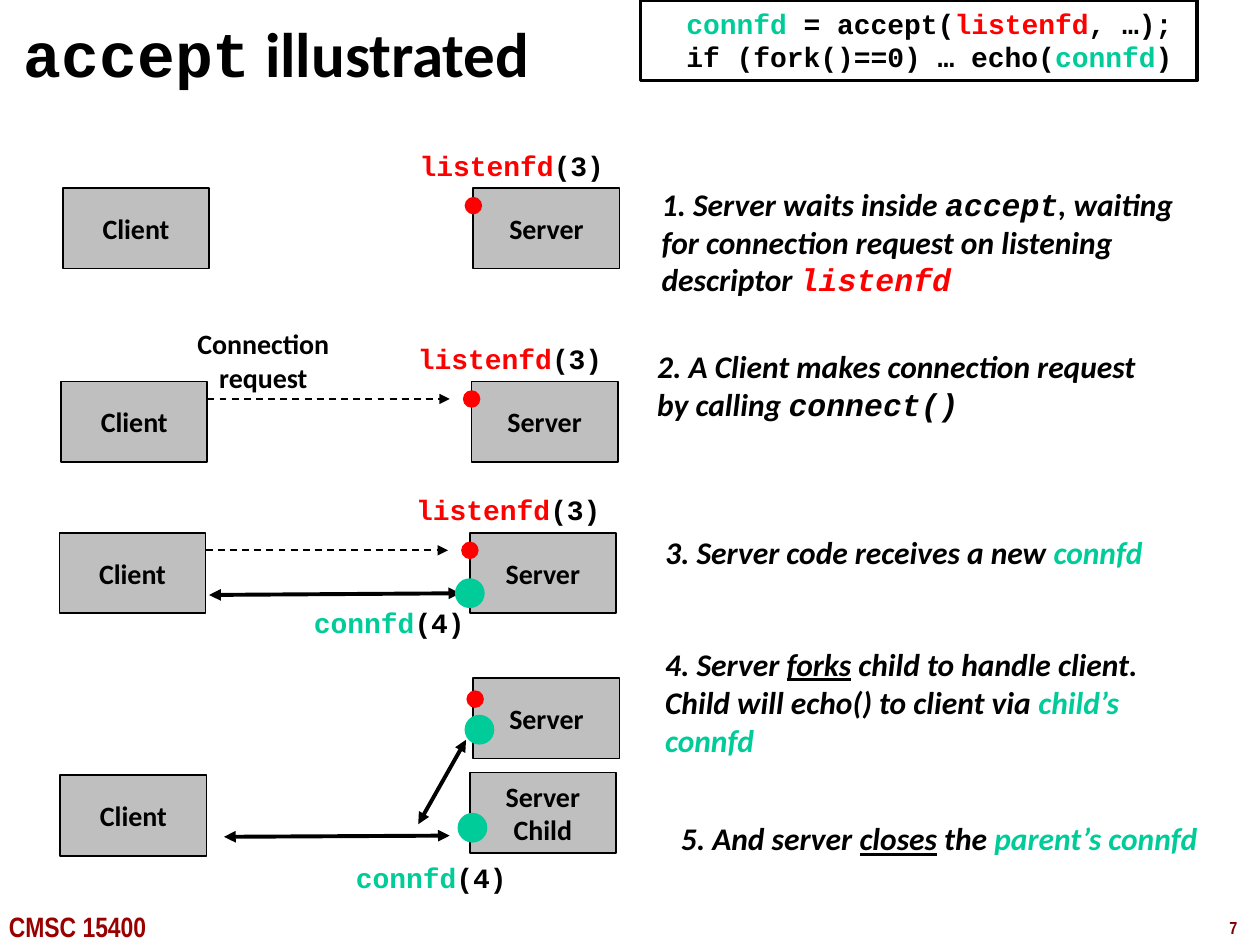
from lxml import etree
from pptx import Presentation
from pptx.dml.color import RGBColor
from pptx.enum.dml import MSO_LINE
from pptx.enum.shapes import MSO_CONNECTOR, MSO_SHAPE
from pptx.enum.text import MSO_ANCHOR, MSO_AUTO_SIZE, PP_ALIGN
from pptx.oxml.ns import qn
from pptx.util import Pt

BLACK, WHITE, GREY = "000000", "FFFFFF", "BFBFBF"
RED, GREEN, MAROON, DARK_RED = "FF0000", "00CC99", "800000", "990000"
SANS, MONO, NARROW = "Calibri", "Courier New", "Arial Narrow"
BOX_WIDTH, BOX_HEIGHT, SERVER_GAP = 83.5, 46, 234.5


def color(hex_code):
    """Turn a hex string into a colour."""
    return RGBColor.from_string(hex_code)


def write(frame, paragraphs, size, font=SANS, ink=BLACK, italic=False,
          align=PP_ALIGN.LEFT, anchor=MSO_ANCHOR.MIDDLE, wrap=False):
    """Fill a frame with paragraphs of runs, each a text and its own overrides."""
    frame.word_wrap = wrap
    frame.vertical_anchor = anchor
    for index, runs in enumerate(paragraphs):
        paragraph = frame.add_paragraph() if index else frame.paragraphs[0]
        paragraph.alignment = align
        paragraph.font.size = Pt(size)
        paragraph.font.bold = True
        paragraph.font.italic = italic
        paragraph.font.name = font
        paragraph.font.color.rgb = color(ink)
        for text, style in runs:
            run = paragraph.add_run()
            run.text = text
            if "font" in style:
                run.font.name = style["font"]
            if "ink" in style:
                run.font.color.rgb = color(style["ink"])
            if "underline" in style:
                run.font.underline = style["underline"]


def add_text(slide, left, top, width, height, paragraphs, size, **options):
    """Place a text box that grows with its text."""
    box = slide.shapes.add_textbox(Pt(left), Pt(top), Pt(width), Pt(height))
    write(box.text_frame, paragraphs, size, **options)
    box.text_frame.auto_size = MSO_AUTO_SIZE.SHAPE_TO_FIT_TEXT


def add_box(slide, left, top, width, height, fill, weight):
    """Draw a filled rectangle with a black outline."""
    box = slide.shapes.add_shape(MSO_SHAPE.RECTANGLE, Pt(left), Pt(top), Pt(width), Pt(height))
    box.shadow.inherit = False
    box.fill.solid()
    box.fill.fore_color.rgb = color(fill)
    box.line.color.rgb = color(BLACK)
    box.line.width = Pt(weight)
    return box


def add_process(slide, left, top, *names):
    """Draw a process box with one centred line for each name."""
    box = add_box(slide, left, top, BOX_WIDTH, BOX_HEIGHT, GREY, 1)
    write(box.text_frame, [[(name, {})] for name in names], 16, align=PP_ALIGN.CENTER)


def add_descriptor(slide, center_x, center_y, diameter, fill):
    """Draw a descriptor dot around its centre."""
    dot = slide.shapes.add_shape(MSO_SHAPE.OVAL, Pt(center_x - diameter / 2),
                                 Pt(center_y - diameter / 2), Pt(diameter), Pt(diameter))
    dot.shadow.inherit = False
    dot.fill.solid()
    dot.fill.fore_color.rgb = color(fill)
    dot.line.fill.background()


def add_arrow(slide, start, end, both_ways=True):
    """Draw a thick two-way arrow or a thin dashed one-way arrow."""
    arrow = slide.shapes.add_connector(MSO_CONNECTOR.STRAIGHT, *map(Pt, start + end))
    arrow.line.color.rgb = color(BLACK)
    arrow.line.width = Pt(2.25 if both_ways else 1)
    if not both_ways:
        arrow.line.dash_style = MSO_LINE.DASH
    outline = arrow.line._get_or_add_ln()
    for end_tag in ("a:headEnd", "a:tailEnd") if both_ways else ("a:tailEnd",):
        etree.SubElement(outline, qn(end_tag)).set("type", "triangle")
    etree.SubElement(arrow._element.spPr, qn("a:effectLst"))


def add_descriptor_label(slide, left, top, width, name, number, ink):
    """Label a descriptor with its name and number."""
    add_text(slide, left, top, width, 26.5, [[(name, {"ink": ink}), (f"({number})", {})]],
             16, font=MONO, align=PP_ALIGN.CENTER)


def add_stage(slide, left, top, requested):
    """Draw a client and a listening server, with the request if there is one."""
    server_left = left + SERVER_GAP
    add_process(slide, left, top, "Client")
    add_process(slide, server_left, top, "Server")
    if requested:
        add_arrow(slide, (left + BOX_WIDTH, top + 10), (left + 222, top + 10), both_ways=False)
    add_descriptor(slide, server_left, top + 10, 10, RED)
    add_descriptor_label(slide, server_left - 38, top - 26.5, 120, "listenfd", 3, RED)


def add_connection(slide, left, top):
    """Add the open connection to a stage."""
    server_left = left + SERVER_GAP
    add_arrow(slide, (left + 85.5, top + 35.5), (left + 229, top + 34.5))
    add_descriptor(slide, server_left, top + 34.5, 17, GREEN)
    add_descriptor_label(slide, left + 138, top + 38, 101, "connfd", 4, GREEN)


def add_forked_stage(slide, left, top):
    """Draw the client with the parent server and its child."""
    child_left, child_top = left + 234, top + 54
    add_process(slide, left, top + 55.5, "Client")
    add_process(slide, left + 236, top, "Server")
    add_process(slide, child_left, child_top, "Server", "Child")
    add_arrow(slide, (left + 93.5, top + 90.7), (left + 222.5, top + 90))
    add_descriptor(slide, left + 237, top + 12, 10, RED)
    add_descriptor(slide, left + 239.5, top + 29.5, 17, GREEN)
    add_descriptor(slide, child_left + 1.5, child_top + 31.5, 17, GREEN)
    add_arrow(slide, (left + 204.5, top + 83.5), (left + 231.8, top + 35.3))
    add_descriptor_label(slide, left + 161.5, top + 100.5, 101, "connfd", 4, GREEN)


def add_title(slide, left, top, width, height):
    """Move the title placeholder and write the heading."""
    title = slide.shapes.title
    title.left, title.top, title.width, title.height = map(Pt, (left, top, width, height))
    write(title.text_frame, [[("accept", {"font": MONO}), (" illustrated", {})]], 36, wrap=True)
    title.text_frame.auto_size = MSO_AUTO_SIZE.NONE


def add_code(slide, left, top, width, height):
    """Draw the framed code excerpt."""
    frame = add_box(slide, left, top, width, height, WHITE, 2.25).text_frame
    write(frame, [
        [("  connfd ", {"ink": GREEN}), ("= accept(", {}), ("listenfd", {"ink": RED}), (", …);", {})],
        [("  if (fork()==0) … echo(", {}), ("connfd", {"ink": GREEN}), (")", {})],
    ], 16, font=MONO, anchor=MSO_ANCHOR.TOP, wrap=True)


def add_steps(slide):
    """Write the numbered explanations beside the stages."""
    steps = [
        (371, 101.5, 318, 73, [[
            ("1. Server waits inside ", {}), ("accept", {"font": MONO}),
            (", waiting for connection request on listening descriptor ", {}),
            ("listenfd", {"font": MONO, "ink": RED})]]),
        (368.5, 194.5, 304.5, 51, [[
            ("2. A Client makes connection request by calling ", {}),
            ("connect()", {"font": MONO})]]),
        (373, 301, 304.5, 29, [[
            ("3. Server code receives a new ", {}), ("connfd", {"ink": GREEN})]]),
        (373, 364.5, 316, 73, [
            [("4. Server ", {}), ("forks", {"underline": True}), (" child to handle client.", {})],
            [("Child will echo() to client via ", {}), ("child’s connfd", {"ink": GREEN})]]),
        (382, 464.5, 316, 29, [[
            ("5. And server ", {}), ("closes", {"underline": True}), (" the", {}),
            (" parent’s connfd", {"ink": GREEN})]]),
    ]
    for left, top, width, height, paragraphs in steps:
        add_text(slide, left, top, width, height, paragraphs, 18, italic=True, wrap=True)


def add_footer(slide):
    """Write the course name and the page number."""
    add_text(slide, -2, 516, 102, 26.5, [[("CMSC 15400", {})]], 16,
             font=NARROW, ink=DARK_RED, anchor=MSO_ANCHOR.TOP)
    add_text(slide, 695.5, 520.5, 24.5, 19.5, [[("7", {})]], 10,
             font=NARROW, ink=MAROON, anchor=MSO_ANCHOR.TOP)


def main():
    """Build the slide and save it."""
    deck = Presentation()
    deck.slide_width, deck.slide_height = Pt(720), Pt(540)
    slide = deck.slides.add_slide(deck.slide_layouts[5])
    add_title(slide, 6.5, 7, 660, 45.5)
    add_code(slide, 366, 0, 318, 46)
    add_stage(slide, 36, 107.5, requested=False)
    add_stage(slide, 35, 218, requested=True)
    add_text(slide, 105, 183, 91, 46, [[("Connection", {})], [("request", {})]], 16,
             align=PP_ALIGN.CENTER)
    add_stage(slide, 34, 304.5, requested=True)
    add_connection(slide, 34, 304.5)
    add_forked_stage(slide, 34.5, 387.5)
    add_steps(slide)
    add_footer(slide)
    deck.save("out.pptx")


if __name__ == "__main__":
    main()
